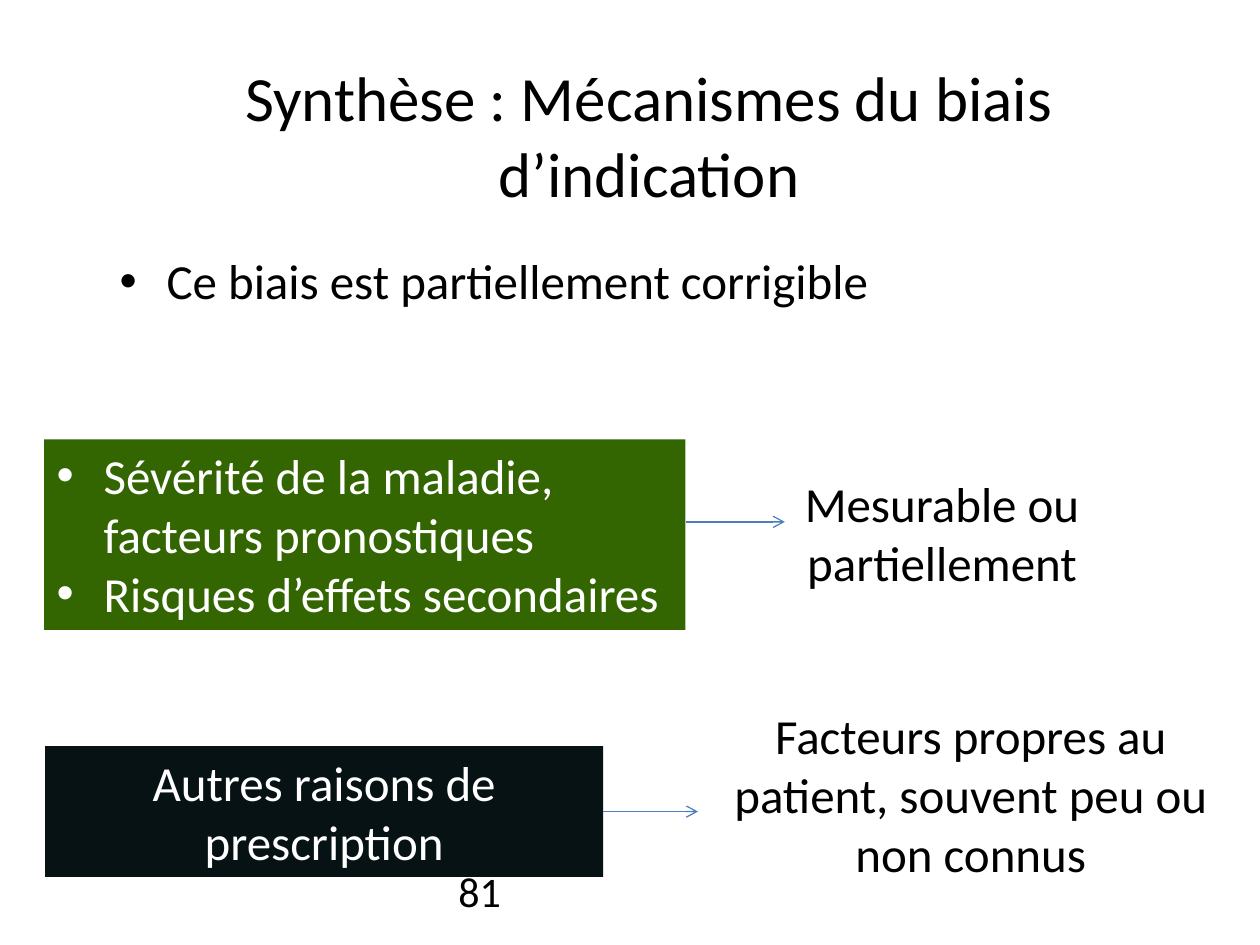
from lxml import etree
from pptx import Presentation
from pptx.dml.color import RGBColor
from pptx.enum.shapes import MSO_CONNECTOR, MSO_SHAPE
from pptx.enum.text import MSO_ANCHOR, PP_ALIGN
from pptx.oxml.ns import qn
from pptx.util import Cm, Pt

LEFT, CENTER = PP_ALIGN.LEFT, PP_ALIGN.CENTER
TOP, MIDDLE = MSO_ANCHOR.TOP, MSO_ANCHOR.MIDDLE
RECTANGLE = MSO_SHAPE.RECTANGLE
STRAIGHT = MSO_CONNECTOR.STRAIGHT
RIGHT_SIDE = 3
TITLE_ONLY = 5

COLORS = {
    "text": "000000",
    "light": "FFFFFF",
    "green": "336600",
    "dark": "071215",
    "arrow": "4B7EBC",
}
FONT = "Calibri"
INDENT = Cm(0.95)


def rgb(name):
    return RGBColor.from_string(COLORS[name])


def add_bullet(p):
    pPr = p._p.get_or_add_pPr()
    pPr.set("marL", str(INDENT))
    pPr.set("indent", str(-INDENT))
    etree.SubElement(pPr, qn("a:buFont")).set("typeface", "Arial")
    etree.SubElement(pPr, qn("a:buChar")).set("char", "•")


def write(tf, lines, size=28, color="text", align=CENTER, anchor=TOP, bullets=False):
    for name, value in {"word_wrap": True, "vertical_anchor": anchor}.items():
        setattr(tf, name, value)
    font_format = {"name": FONT, "size": Pt(size)}
    for i, line in enumerate(lines):
        p = tf.paragraphs[0] if i == 0 else tf.add_paragraph()
        p.alignment = align
        if bullets:
            add_bullet(p)
        r = p.add_run()
        r.text = line
        for name, value in font_format.items():
            setattr(r.font, name, value)
        r.font.color.rgb = rgb(color)


def place_title(s, box, text):
    title = s.shapes.title
    for name, value in zip(("left", "top", "width", "height"), box):
        setattr(title, name, Cm(value))
    write(title.text_frame, [text], size=36, anchor=MIDDLE)


def add_text(s, box, lines, **style):
    sp = s.shapes.add_textbox(*map(Cm, box))
    write(sp.text_frame, lines, **style)


def add_panel(s, box, fill, lines, **style):
    sp = s.shapes.add_shape(RECTANGLE, *map(Cm, box))
    sp.shadow.inherit = False
    sp.fill.solid()
    sp.fill.fore_color.rgb = rgb(fill)
    sp.line.fill.background()
    write(sp.text_frame, lines, color="light", **style)
    return sp


def add_arrow(s, x1, x2, y, source=None):
    """Draw a level arrow, joined to the right side of source if given."""
    line = s.shapes.add_connector(STRAIGHT, Cm(x1), Cm(y), Cm(x2), Cm(y))
    if source is not None:
        line.begin_connect(source, RIGHT_SIDE)
    line.line.color.rgb = rgb("arrow")
    line.line.width = Pt(0.75)
    etree.SubElement(line.line._get_or_add_ln(), qn("a:tailEnd")).set("type", "arrow")
    etree.SubElement(line._element.spPr, qn("a:effectLst"))


def main():
    prs = Presentation()
    prs.slide_width, prs.slide_height = Cm(25.4), Cm(19.05)
    s = prs.slides.add_slide(prs.slide_layouts[TITLE_ONLY])

    place_title(s, (1.65, 1.12, 22.86, 3.18),
                "Synthèse : Mécanismes du biais d’indication")
    add_text(s, (8.99, 17.32, 8.05, 1.02), ["81"], size=24, align=LEFT)
    add_text(s, (2.16, 4.93, 21.62, 1.45),
             ["Ce biais est partiellement corrigible"], align=LEFT, bullets=True)

    add_panel(s, (0.89, 8.86, 12.93, 3.84), "green",
              ["Sévérité de la maladie, facteurs pronostiques",
               "Risques d’effets secondaires"], align=LEFT, bullets=True)
    add_text(s, (13.49, 9.42, 11, 2.64), ["Mesurable ou partiellement"])
    add_arrow(s, 13.82, 15.82, 10.52)

    other_reasons = add_panel(s, (0.91, 15.04, 11.25, 2.64), "dark",
                              ["Autres raisons de prescription"])
    add_text(s, (14.07, 14.1, 11, 3.84),
             ["Facteurs propres au patient, souvent peu ou non connus"])
    add_arrow(s, 12.16, 14.07, 16.36, other_reasons)

    prs.save("out.pptx")


if __name__ == "__main__":
    main()
